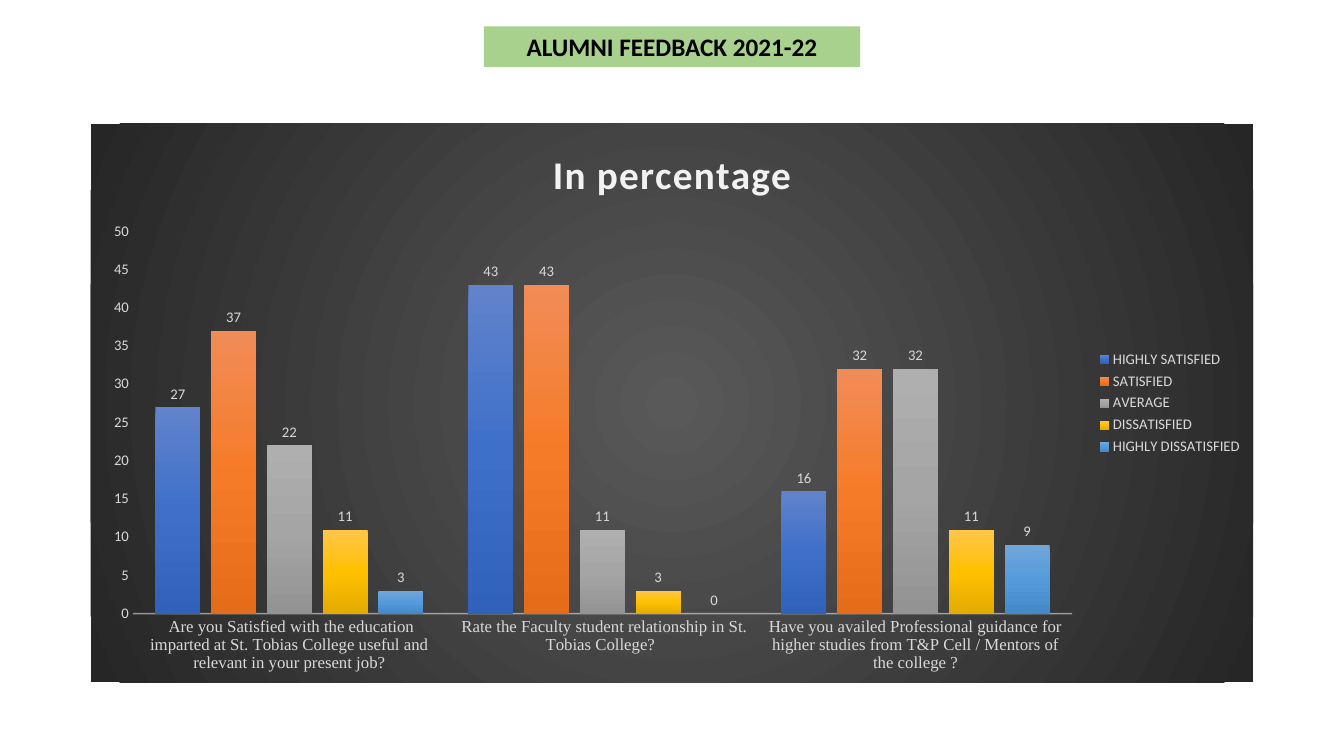
from dataclasses import dataclass

from lxml import etree
from pptx import Presentation
from pptx import util as u
from pptx.chart import data
from pptx.dml import color
from pptx.enum import chart as ch
from pptx.enum import text
from pptx.oxml import ns


@dataclass(frozen=True)
class Theme:
    sans: str = "Calibri"
    serif: str = "Times New Roman"
    ink: str = "000000"
    band: str = "A9D18E"
    pale: str = "D9D9D9"
    light: str = "F2F2F2"
    glow: tuple = ("595959", "262626")
    head: float = 18
    title: float = 28
    cat: float = 12
    small: float = 10.5


T = Theme()
WIDE, HIGH = 13.33, 7.5

CATS = (
    " Are you Satisfied with the education imparted at St. Tobias College useful and relevant in your present job?",
    " Rate the Faculty student relationship in St. Tobias College? ",
    "Have you availed Professional guidance for higher studies from T&P Cell / Mentors of the college ?",
)
GRADES = (
    ("HIGHLY SATISFIED", (27, 43, 16), ("6183CB", "3E70CA", "3062BB")),
    ("SATISFIED", (37, 43, 32), ("F18C57", "F67B28", "E56C19")),
    ("AVERAGE", (22, 11, 32), ("AFAFAF", "A5A5A5", "939393")),
    ("DISSATISFIED", (11, 3, 11), ("FFC64B", "FFC000", "E3AB00")),
    ("HIGHLY DISSATISFIED", (3, 0, 9), ("71A6DB", "559BDB", "448ACA")),
)


def rgb(tone):
    return color.RGBColor.from_string(tone)


def style(font, size, tone, face=T.sans, bold=False):
    font.size, font.name, font.bold = u.Pt(size), face, bold
    font.color.rgb = rgb(tone)


def node(host, tag, **attrs):
    return etree.SubElement(host, ns.qn(tag), attrs)


def blend(tones, radial=False):
    grad = etree.Element(ns.qn("a:gradFill"), rotWithShape="1")
    stops = node(grad, "a:gsLst")
    for i, tone in enumerate(tones):
        stop = node(stops, "a:gs", pos=str(100000 * i // (len(tones) - 1)))
        node(stop, "a:srgbClr", val=tone)
    if radial:
        way = node(grad, "a:path", path="circle")
        node(way, "a:fillToRect", **dict.fromkeys("ltrb", "50000"))
    else:
        node(grad, "a:lin", ang="5400000", scaled="0")
    return grad


def place(shape, box):
    shape.left, shape.top, shape.width, shape.height = map(u.Inches, box)


def header(slide, box):
    title = slide.shapes.title
    place(title, box)
    title.fill.solid()
    title.fill.fore_color.rgb = rgb(T.band)
    frame = title.text_frame
    frame.auto_size = text.MSO_AUTO_SIZE.NONE
    frame.vertical_anchor = text.MSO_ANCHOR.MIDDLE
    para = frame.paragraphs[0]
    para.alignment = text.PP_ALIGN.CENTER
    run = para.add_run()
    run.text = "ALUMNI FEEDBACK 2021-22"
    style(run.font, T.head, T.ink, bold=True)


def caption(chart):
    chart.has_title = True
    run = chart.chart_title.text_frame.paragraphs[0].add_run()
    run.text = "In percentage"
    style(run.font, T.title, T.light, bold=True)
    run.font._element.set("spc", "100")
    chart.chart_title.include_in_layout = False


def axes(chart):
    cat, val = chart.category_axis, chart.value_axis
    for axis in (cat, val):
        axis.has_major_gridlines = False
        axis.major_tick_mark = axis.minor_tick_mark = ch.XL_TICK_MARK.NONE
    style(cat.tick_labels.font, T.cat, T.pale, T.serif)
    style(val.tick_labels.font, T.small, T.pale)
    val.minimum_scale, val.maximum_scale, val.major_unit = 0, 50, 5
    val.format.line.fill.background()
    line = cat.format.line
    line.width = u.Pt(1)
    line.color.rgb = rgb(T.light)
    tone = next(cat._element.find(ns.qn("c:spPr")).iter(ns.qn("a:srgbClr")))
    node(tone, "a:alpha", val="54000")


def bars(plot):
    plot.gap_width, plot.overlap = 100, -24
    plot.vary_by_categories = False
    for bar, (_, _, tones) in zip(plot.series, GRADES):
        bar.format.fill.background()
        props = bar._element.find(ns.qn("c:spPr"))
        props.replace(props[0], blend(tones))
        tags = bar.data_labels
        tags.show_value = True
        tags.position = ch.XL_LABEL_POSITION.OUTSIDE_END
        style(tags.font, T.small, T.pale)


def legend(chart):
    chart.has_legend = True
    key = chart.legend
    key.position = ch.XL_LEGEND_POSITION.RIGHT
    key.include_in_layout = False
    style(key.font, T.small, T.pale)


def panel(slide, box):
    stats = data.CategoryChartData()
    stats.categories = CATS
    for name, vals, _ in GRADES:
        stats.add_series(name, vals)
    chart = slide.shapes.add_chart(
        ch.XL_CHART_TYPE.COLUMN_CLUSTERED, *map(u.Inches, box), stats
    ).chart
    style(chart.font, 10, T.ink)
    props = etree.Element(ns.qn("c:spPr"))
    props.append(blend(T.glow, radial=True))
    node(node(props, "a:ln"), "a:noFill")
    chart._chartSpace.find(ns.qn("c:chart")).addnext(props)
    caption(chart)
    axes(chart)
    bars(chart.plots[0])
    legend(chart)


def main():
    deck = Presentation()
    deck.slide_width, deck.slide_height = u.Inches(WIDE), u.Inches(HIGH)
    slide = deck.slides.add_slide(deck.slide_layouts[5])
    header(slide, (WIDE * 0.36, HIGH * 0.035, WIDE * 0.28, 0.4))
    panel(slide, (0.9, 1.23, WIDE - 1.8, 5.54))
    deck.save("out.pptx")


if __name__ == "__main__":
    main()
